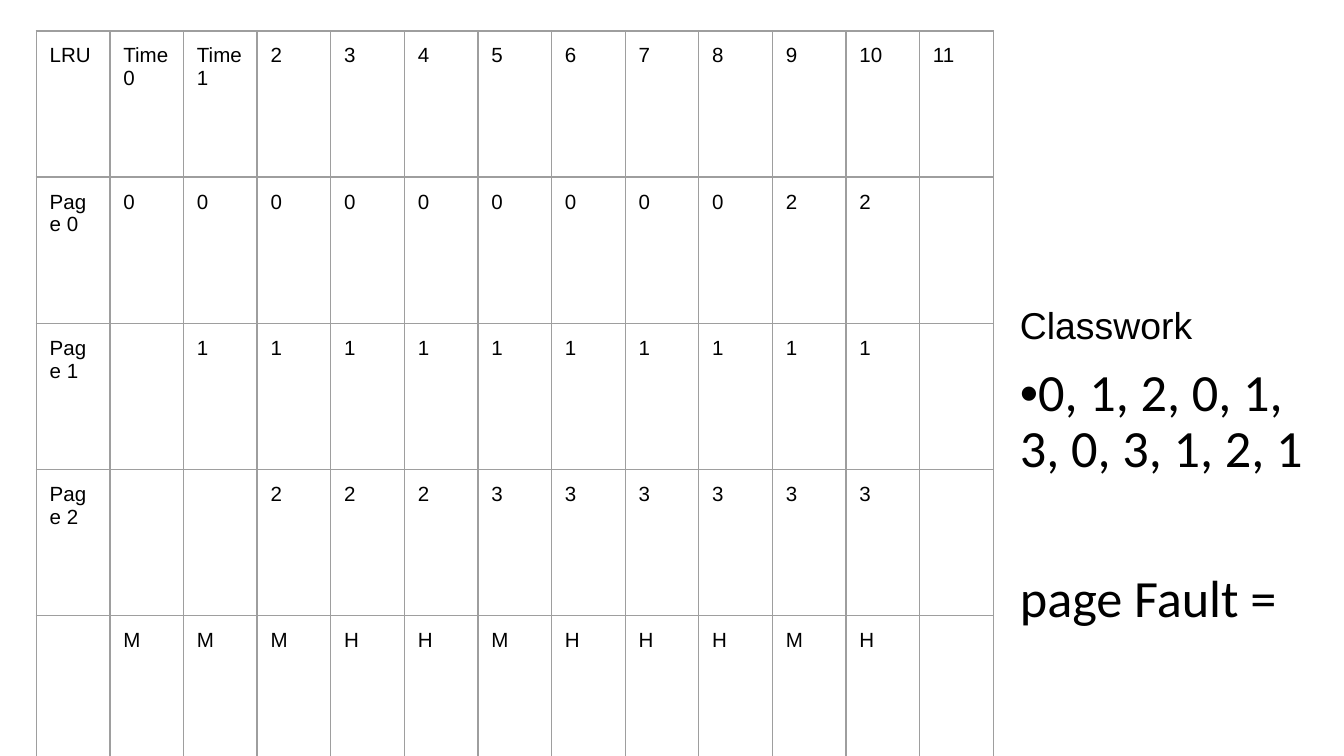
from dataclasses import dataclass

from pptx import Presentation
from pptx import util as u
from pptx.dml.color import RGBColor
from pptx.oxml import parse_xml
from pptx.oxml.ns import nsdecls


@dataclass(frozen=True)
class Theme:
    ink: str = "000000"
    grid: str = "9E9E9E"
    sans: str = "Arial"
    body: str = "Calibri"
    small: int = 11
    head: int = 20
    large: int = 28
    rule: float = 0.75
    pad: float = 0.1


def write(para, words, font, size, ink, before=0, lead=None):
    if before:
        para.space_before = u.Pt(before)
    if lead:
        para.line_spacing = lead
    para.font.size = u.Pt(size)
    if words:
        run = para.add_run()
        run.text = words
        run.font.name = font
        run.font.size = u.Pt(size)
        run.font.color.rgb = RGBColor.from_string(ink)


class Deck:
    """Holds the theme and the current slide."""

    def __init__(self, theme, slide):
        self.theme = theme
        self.slide = slide

    def pad(self, item):
        for side in ("left", "top", "right", "bottom"):
            setattr(item, f"margin_{side}", u.Inches(self.theme.pad))

    def edge(self, cell):
        props = cell._tc.get_or_add_tcPr()
        for side in "LRTB":
            props.append(parse_xml(
                f'<a:ln{side} {nsdecls("a")} w="{u.Pt(self.theme.rule)}">'
                f'<a:solidFill><a:srgbClr val="{self.theme.grid}"/></a:solidFill>'
                f'</a:ln{side}>'))

    def table(self, rows, left, top, width, height):
        t = self.theme
        spot = [u.Inches(n) for n in (left, top, width, height)]
        grid = self.slide.shapes.add_table(len(rows), len(rows[0]), *spot).table
        grid.first_row = grid.horz_banding = False
        for col in grid.columns:
            col.width = u.Inches(width / len(rows[0]))
        for r, row in enumerate(rows):
            grid.rows[r].height = u.Inches(height / len(rows))
            for c, words in enumerate(row):
                cell = grid.cell(r, c)
                self.pad(cell)
                self.edge(cell)
                cell.fill.background()
                write(cell.text_frame.paragraphs[0], words,
                      font=t.sans, size=t.small, ink=t.ink)

    def text(self, lines, left, top, width, height):
        spot = [u.Inches(n) for n in (left, top, width, height)]
        frame = self.slide.shapes.add_textbox(*spot).text_frame
        frame.word_wrap = True
        self.pad(frame)
        for i, (runs, style) in enumerate(lines):
            para = frame.add_paragraph() if i else frame.paragraphs[0]
            for words, font in runs:
                write(para, words, font=font, ink=self.theme.ink, **style)


def main():
    show = Presentation()
    show.slide_width = u.Inches(10)
    show.slide_height = show.slide_width * 9 // 16
    theme = Theme()
    deck = Deck(theme, show.slides.add_slide(show.slide_layouts[6]))

    times = ["Time 0", "Time 1"] + [str(n) for n in range(2, 12)]
    frames = ["00000000022", " 1111111111", "  222333333"]
    rows = [["LRU"] + times]
    for n, held in enumerate(frames):
        rows.append([f"Page {n}"] + [mark.strip() for mark in held] + [""])
    rows.append([""] + list("MMMHHMHHHMH") + [""])
    deck.table(rows, 0.27, 0.23, 7.12, 5.44)

    body = dict(size=theme.large, lead=0.9)
    calls = "0, 1, 2, 0, 1, 3, 0, 3, 1, 2, 1"
    deck.text([
        ([("Classwork", theme.sans)], dict(size=theme.head)),
        ([("•", theme.sans), (calls, theme.body)], dict(body, before=10)),
        ([("page Fault =", theme.body)], dict(body, before=50)),
    ], 7.49, 2.15, 2.51, 1.33)
    show.save("out.pptx")


if __name__ == "__main__":
    main()
